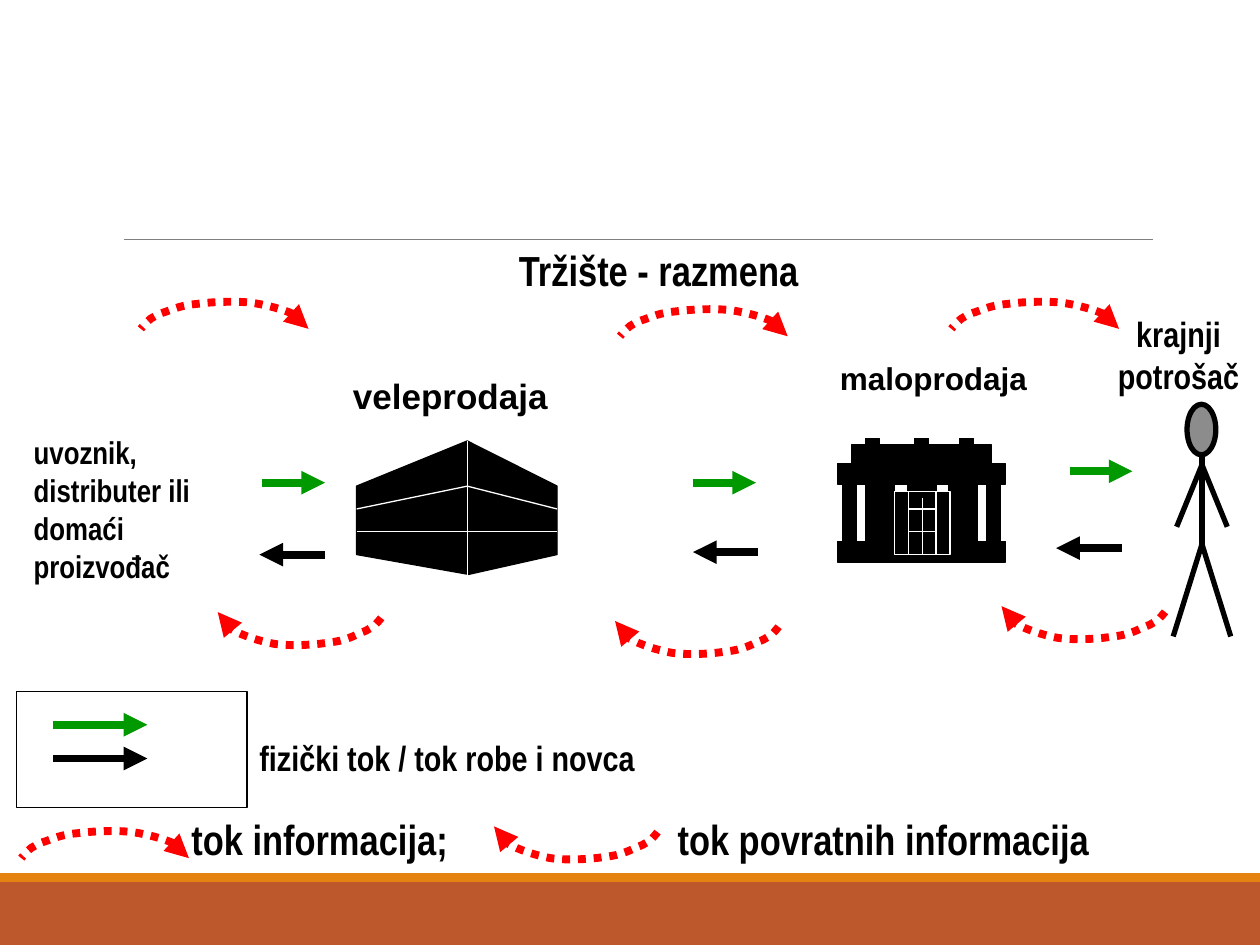
"""Build a slide on the flow of goods, money and information in a market."""
from lxml import etree
from pptx import Presentation
from pptx.dml.color import RGBColor
from pptx.enum.dml import MSO_LINE
from pptx.enum.shapes import MSO_CONNECTOR, MSO_SHAPE
from pptx.enum.text import PP_ALIGN
from pptx.oxml.ns import qn
from pptx.util import Cm, Pt

RECTANGLE, OVAL = MSO_SHAPE.RECTANGLE, MSO_SHAPE.OVAL
STRAIGHT = MSO_CONNECTOR.STRAIGHT
DOTTED = MSO_LINE.ROUND_DOT
LEFT, CENTER = PP_ALIGN.LEFT, PP_ALIGN.CENTER

COLORS = {
    "black": "000000", "white": "FFFFFF", "gray": "808080", "head": "8C8C8C",
    "goods": "009900", "information": "FF0000", "rust": "BD582C", "orange": "E48312",
}
BEND = [
    (0.05, 0.05), (0.13, 0.25), (0.3, 0.36),
    (0.48, 0.46), (0.81, 0.58), (1.14, 0.64),
    (1.47, 0.69), (1.98, 0.66), (2.26, 0.61),
    (2.57, 0.58), (2.74, 0.48), (2.9, 0.41),
    (3.05, 0.36), (3.1, 0.3), (3.18, 0.25),
    (3.25, 0.18), (3.35, 0.05), (3.38, 0),
]


def color(name):
    """Return the named colour."""
    return RGBColor.from_string(COLORS[name])


def style_line(shape, name, width):
    """Set the colour and width of an outline, or hide it."""
    if name is None:
        shape.line.fill.background()
        return
    shape.line.color.rgb = color(name)
    shape.line.width = Pt(width)


def style_fill(shape, name):
    """Set a flat fill, or none, and remove the shadow."""
    shape.shadow.inherit = False
    if name is None:
        shape.fill.background()
        return
    shape.fill.solid()
    shape.fill.fore_color.rgb = color(name)


def add_block(shapes, place, fill, line=None, width=0.75, kind=RECTANGLE):
    """Add a preset shape."""
    block = shapes.add_shape(kind, *map(Cm, place))
    style_fill(block, fill)
    style_line(block, line, width)


def add_arrowhead(shape, end):
    """Put a triangle on one end of a line."""
    etree.SubElement(shape.line._get_or_add_ln(), qn(f"a:{end}"), type="triangle")


def add_line(shapes, ends, name, width, arrow=False):
    """Add a straight line, with an arrowhead if wanted."""
    line = shapes.add_connector(STRAIGHT, *map(Cm, ends))
    style_line(line, name, width)
    if arrow:
        add_arrowhead(line, "tailEnd")
    etree.SubElement(line.element.spPr, qn("a:effectLst"))


def add_outline(shapes, points, fill, line, width, close):
    """Add a freeform through the points."""
    points = [(Cm(left), Cm(top)) for left, top in points]
    builder = shapes.build_freeform(*points[0])
    builder.add_line_segments(points[1:], close=close)
    outline = builder.convert_to_shape()
    style_fill(outline, fill)
    style_line(outline, line, width)
    return outline


def add_information_arc(shapes, left, top, across=1, down=1):
    """Add a dotted arc whose arrowhead is at the given point."""
    points = [(left, top)] + [(left + across * x, top + down * y) for x, y in BEND]
    arc = add_outline(shapes, points, None, "information", 4.5, False)
    route = next(arc.element.iter(qn("a:path")))
    segments = route.findall(qn("a:lnTo"))
    for start in range(0, len(segments), 3):
        curve = etree.SubElement(route, qn("a:cubicBezTo"))
        for segment in segments[start:start + 3]:
            curve.append(segment[0])
            route.remove(segment)
    arc.line.dash_style = DOTTED
    add_arrowhead(arc, "headEnd")


def add_label(shapes, place, lines, size, font="Arial Narrow", align=LEFT, wrap=True):
    """Add a bold label with one paragraph for each line."""
    frame = shapes.add_textbox(*map(Cm, place)).text_frame
    frame.word_wrap = wrap
    frame.text = "\n".join(lines)
    look = {"name": font, "size": Pt(size), "bold": True}
    for para in frame.paragraphs:
        para.alignment = align
        for span in para.runs:
            for key, value in look.items():
                setattr(span.font, key, value)
            span.font.color.rgb = color("black")


def add_store(page):
    """Draw the retail store."""
    shapes = page.shapes.add_group_shape().shapes
    walls = [(16.89, top, 3.38, 0.41) for top in (10.92, 9.35)]
    walls += [(left, 9.75, 0.28, 1.19) for left in (16.99, 19.89)]
    walls += [(left, 9.75, 0.58, 1.19) for left in (17.45, 18.29, 19.13)]
    walls += [(17.17, 8.97, 2.82, 0.41)]
    walls += [(left, 8.84, 0.28, 0.48) for left in (17.45, 18.44, 19.35)]
    doors = [(left, 9.91, 0.28, 1.27) for left in (18.03, 18.87)]
    doors += [(18.31, 9.91, 0.56, 1.27), (18.31, 10.26, 0.56, 0.46)]
    for places, line in ((walls, "black"), (doors, "white")):
        for place in places:
            add_block(shapes, place, "black", line)
    add_line(shapes, (18.59, 10.03, 18.59, 11.18), "white", 0.75)


def add_warehouse(page):
    """Draw the wholesale warehouse."""
    shapes = page.shapes.add_group_shape().shapes
    corners = [(7.19, 11.18), (7.19, 9.8), (9.42, 8.89),
               (11.23, 9.8), (11.23, 11.18), (9.45, 11.58)]
    add_outline(shapes, corners, "black", "black", 0.75, True)
    for ends in ((7.19, 10.72, 11.23, 10.72), (9.42, 8.89, 9.42, 11.63),
                 (7.19, 10.26, 9.42, 9.8), (9.42, 9.8, 11.23, 10.26)):
        add_line(shapes, ends, "white", 0.75)


def add_consumer(page):
    """Draw the final consumer."""
    shapes = page.shapes.add_group_shape().shapes
    add_block(shapes, (23.93, 8.15, 0.58, 1.02), "head", "black", 3, OVAL)
    middle = 24.23
    add_line(shapes, (middle, 9.17, middle, 11.02), "black", 3)
    for side in (-1, 1):
        add_line(shapes, (middle, 10.97, middle + side * 0.58, 12.83), "black", 3)
        add_line(shapes, (middle, 9.37, middle + side * 0.51, 10.62), "black", 3)


def add_flows(page):
    """Draw the arrows for goods, money and information."""
    shapes = page.shapes
    flows = [(left, top, 1.27, "goods")
             for left, top in ((5.28, 9.73), (13.97, 9.73), (21.56, 9.5))]
    flows += [(left, top, -1.32, "black")
              for left, top in ((22.61, 11.05), (15.29, 11.13), (6.55, 11.18))]
    flows += [(1.07, 14.61, 1.9, "goods"), (1.07, 15.29, 1.9, "black")]
    for left, top, length, name in flows:
        add_line(shapes, (left, top, left + length, top), name, 4.5, True)
    for left, top in ((12.4, 12.52), (20.19, 12.22), (4.39, 12.34), (9.96, 16.66)):
        add_information_arc(shapes, left, top)
    for left, top in ((6.22, 6.63), (15.88, 6.78), (22.56, 6.63), (3.81, 17.3)):
        add_information_arc(shapes, left, top, -1, -0.82)


def add_labels(page):
    """Write the labels and the legend."""
    shapes = page.shapes
    add_label(shapes, (6.78, 7.42, 4.6, 1.12), ["veleprodaja"], 20, "Arial", CENTER)
    add_label(shapes, (16.38, 7.11, 4.88, 1.02), ["maloprodaja"], 18, "Arial", CENTER)
    add_label(shapes, (22.12, 6.17, 3.28, 1.96), ["krajnji potrošač"], 20, align=CENTER)
    add_label(shapes, (3.61, 16.28, 6, 1.3), ["tok informacija;"], 24)
    add_label(shapes, (13.41, 16.28, 11, 1.3), ["tok povratnih informacija"], 24)
    add_label(shapes, (4.98, 14.73, 8.76, 1.12), ["fizički tok / tok robe i novca"], 20)
    add_label(shapes, (10.21, 4.8, 6.2, 1.3), ["Tržište - razmena"], 24, wrap=False)
    add_label(shapes, (0.43, 8.61, 5.08, 3.33),
              ["uvoznik, distributer ili", "domaći proizvođač"], 18)


def main():
    """Build and save the deck."""
    deck = Presentation()
    deck.slide_width, deck.slide_height = Cm(25.4), Cm(19.05)
    page = deck.slides.add_slide(deck.slide_layouts[6])
    add_block(page.shapes, (0, 17.78, 25.4, 1.27), "rust")
    add_block(page.shapes, (0, 17.6, 25.4, 0.18), "orange")
    add_line(page.shapes, (2.49, 4.83, 23.24, 4.83), "gray", 0.5)
    add_block(page.shapes, (0.33, 13.94, 4.65, 2.34), None, "black")
    add_store(page)
    add_warehouse(page)
    add_consumer(page)
    add_labels(page)
    add_flows(page)
    deck.save("out.pptx")


if __name__ == "__main__":
    main()
